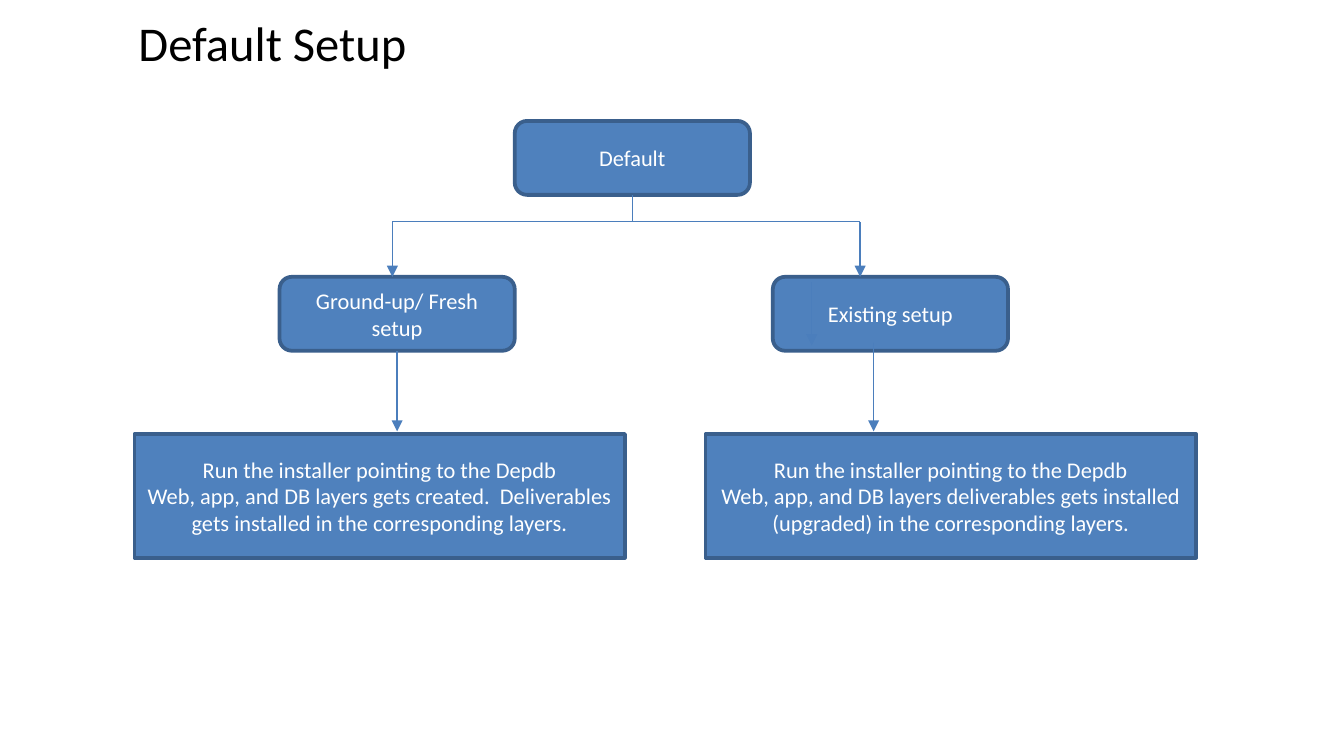
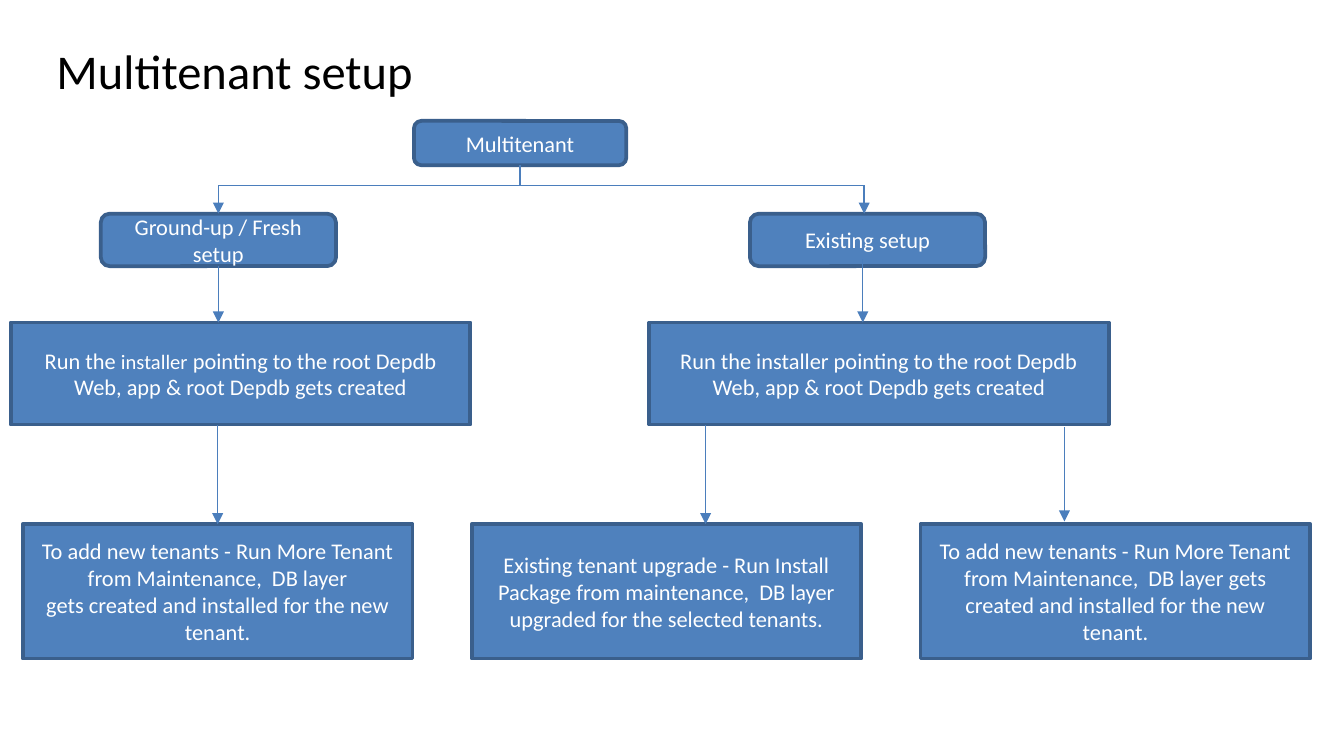
import dataclasses

import pptx
import pptx.dml.color
import pptx.enum.shapes
import pptx.enum.text
import pptx.oxml.ns
import pptx.util
from lxml import etree

Inches = pptx.util.Inches
MSO_SHAPE = pptx.enum.shapes.MSO_SHAPE
PP_ALIGN = pptx.enum.text.PP_ALIGN

BLACK = pptx.dml.color.RGBColor(0x00, 0x00, 0x00)
WHITE = pptx.dml.color.RGBColor(0xFF, 0xFF, 0xFF)
BOX_FILL = pptx.dml.color.RGBColor(0x4F, 0x81, 0xBD)
BOX_LINE = pptx.dml.color.RGBColor(0x3A, 0x5F, 0x8C)
ARROW_BLUE = pptx.dml.color.RGBColor(0x4B, 0x7E, 0xBC)
FONT = "Calibri"
CHOICE_WIDTH = 1.75


@dataclasses.dataclass
class Box:
    """A region in inches."""
    left: float
    top: float
    width: float
    height: float

    @property
    def center(self):
        return self.left + self.width / 2

    @property
    def bottom(self):
        return self.top + self.height

    def lengths(self):
        return [Inches(value) for value in dataclasses.astuple(self)]


def write_text(shape, paragraphs, size=12, color=WHITE, align=PP_ALIGN.CENTER,
               side_inset=0.1):
    """Fill a shape; a paragraph is a string or a list of (text, size) runs."""
    frame = shape.text_frame
    frame.word_wrap = True
    frame.auto_size = pptx.enum.text.MSO_AUTO_SIZE.NONE
    frame.vertical_anchor = pptx.enum.text.MSO_ANCHOR.MIDDLE
    frame.margin_left = frame.margin_right = Inches(side_inset)
    frame.margin_top = frame.margin_bottom = Inches(0.05)
    for index, runs in enumerate(paragraphs):
        paragraph = frame.add_paragraph() if index else frame.paragraphs[0]
        paragraph.alignment = align
        paragraph.space_before = pptx.util.Pt(0)
        for text, run_size in [(runs, size)] if isinstance(runs, str) else runs:
            run = paragraph.add_run()
            run.text = text
            run.font.name = FONT
            run.font.size = pptx.util.Pt(run_size)
            run.font.color.rgb = color


def add_titled_slide(presentation, title, box):
    slide = presentation.slides.add_slide(presentation.slide_layouts[5])
    shape = slide.shapes.title
    shape.left, shape.top, shape.width, shape.height = box.lengths()
    write_text(shape, [title], size=26, color=BLACK, align=PP_ALIGN.LEFT,
               side_inset=0)
    return slide


def add_node(slide, box, paragraphs, kind=MSO_SHAPE.RECTANGLE):
    shape = slide.shapes.add_shape(kind, *box.lengths())
    shape.shadow.inherit = False
    shape.fill.solid()
    shape.fill.fore_color.rgb = BOX_FILL
    shape.line.color.rgb = BOX_LINE
    shape.line.width = pptx.util.Pt(2)
    write_text(shape, paragraphs)
    return shape


def add_line(slide, start, end, arrow=True, from_shape=None, to_shape=None):
    """Draw a straight line, joined to a bottom or top middle if given."""
    line = slide.shapes.add_connector(
        pptx.enum.shapes.MSO_CONNECTOR.STRAIGHT,
        *[Inches(value) for value in (*start, *end)])
    line.line.color.rgb = ARROW_BLUE
    line.line.width = pptx.util.Pt(0.75)
    properties = line._element.spPr
    if arrow:
        etree.SubElement(properties.find(pptx.oxml.ns.qn("a:ln")),
                         pptx.oxml.ns.qn("a:tailEnd"), type="triangle")
    etree.SubElement(properties, pptx.oxml.ns.qn("a:effectLst"))
    if from_shape is not None:
        line.begin_connect(from_shape, 2)
    if to_shape is not None:
        line.end_connect(to_shape, 0)


def add_tree(slide, area, root, labels, child_height, rail_drop, arms,
             join_fresh=False):
    """Root above two choices; root and arms are offsets within the area."""
    root_box = Box(area.left + root.left, area.top, root.width, root.height)
    child_top = area.bottom - child_height
    fresh_box = Box(area.left, child_top, CHOICE_WIDTH, child_height)
    existing_box = Box(area.left + area.width - CHOICE_WIDTH, child_top,
                       CHOICE_WIDTH, child_height)
    root_shape, fresh, _ = [
        add_node(slide, box, [label], MSO_SHAPE.ROUNDED_RECTANGLE)
        for box, label in zip((root_box, fresh_box, existing_box), labels)]

    # Stem, rail and two arms
    rail = root_box.bottom + rail_drop
    left, right = [area.left + arm for arm in arms]
    add_line(slide, (root_box.center, root_box.bottom), (root_box.center, rail),
             arrow=False, from_shape=root_shape)
    add_line(slide, (left, rail), (right, rail), arrow=False)
    add_line(slide, (left, rail), (left, child_top),
             to_shape=fresh if join_fresh else None)
    add_line(slide, (right, rail), (right, child_top))
    return fresh, fresh_box


def add_steps(slide, area, width, texts):
    """Spread boxes of one width evenly over the area."""
    pitch = (area.width - width) / (len(texts) - 1)
    return [add_node(slide, Box(area.left + index * pitch, area.top, width,
                                area.height), paragraphs)
            for index, paragraphs in enumerate(texts)]


def build_default_setup(presentation):
    slide = add_titled_slide(presentation, "Default Setup",
                             Box(1.03, 0.15, 8.58, 0.33))
    tree = Box(2.08, 0.9, 5.42, 1.71)
    steps = Box(1, 3.23, 7.9, 0.92)
    fresh, fresh_box = add_tree(
        slide, tree, Box(1.75, 0, 1.75, 0.55),
        ["Default", "Ground-up/ Fresh setup", "Existing setup"],
        child_height=0.55, rail_drop=0.2, arms=(0.84, 4.32))
    add_steps(slide, steps, 3.65, [
        ["Run the installer pointing to the Depdb",
         "Web, app, and DB layers gets created.  Deliverables gets installed "
         "in the corresponding layers."],
        ["Run the installer pointing to the Depdb",
         "Web, app, and DB layers deliverables gets installed (upgraded) "
         "in the corresponding layers."]])

    # Arrows from the choices to their steps
    arrow_end = steps.top - 0.02
    add_line(slide, (fresh_box.center, tree.bottom),
             (fresh_box.center, arrow_end), from_shape=fresh)
    add_line(slide, (6.04, 2.1), (6.04, 2.57))
    add_line(slide, (6.5, 2.55), (6.5, arrow_end))


def build_multitenant_setup(presentation):
    slide = add_titled_slide(presentation, "Multitenant setup",
                             Box(0.42, 0.31, 9.25, 0.42))
    tree = Box(0.75, 0.9, 6.58, 1.08)
    installs = Box(0.08, 2.4, 8.17, 0.76)
    tenants = Box(0.17, 3.9, 9.58, 1)
    tenant_width = 2.9
    fresh, fresh_box = add_tree(
        slide, tree, Box(2.33, 0, 1.58, 0.33),
        ["Multitenant", "Ground-up / Fresh setup", "Existing setup"],
        child_height=0.39, rail_drop=0.15, arms=(CHOICE_WIDTH / 2, 5.68),
        join_fresh=True)
    created = "Web, app & root Depdb gets created"
    add_steps(slide, installs, 3.42, [
        [[("Run the ", 12), ("installer", 11),
          (" pointing to the root Depdb", 12)], created],
        ["Run the installer pointing to the root Depdb", created]])
    new_tenants = "To add new tenants - Run More Tenant from Maintenance,  DB layer"
    new_result = "gets created and installed for the new tenant."
    add_tenant = add_steps(slide, tenants, tenant_width, [
        [new_tenants, new_result],
        ["Existing tenant upgrade - Run Install Package from maintenance,  "
         "DB layer upgraded for the selected tenants."],
        [f"{new_tenants} {new_result}"]])[0]

    # Arrows from the choices to the installs
    add_line(slide, (fresh_box.center, tree.bottom),
             (fresh_box.center, installs.top), from_shape=fresh)
    add_line(slide, (6.42, 1.93), (6.42, installs.top))

    # Arrows from the installs to the tenants
    tenant_center = tenants.left + tenant_width / 2
    add_line(slide, (tenant_center, installs.bottom),
             (tenant_center, tenants.top), to_shape=add_tenant)
    add_line(slide, (5.25, installs.bottom), (5.25, tenants.top))
    add_line(slide, (7.92, installs.bottom + 0.02), (7.92, tenants.top - 0.02))


def main():
    presentation = pptx.Presentation()
    # Widescreen, 16 to 9
    presentation.slide_width = Inches(10)
    presentation.slide_height = Inches(10) * 9 // 16
    build_default_setup(presentation)
    build_multitenant_setup(presentation)
    presentation.save("out.pptx")


if __name__ == "__main__":
    main()
